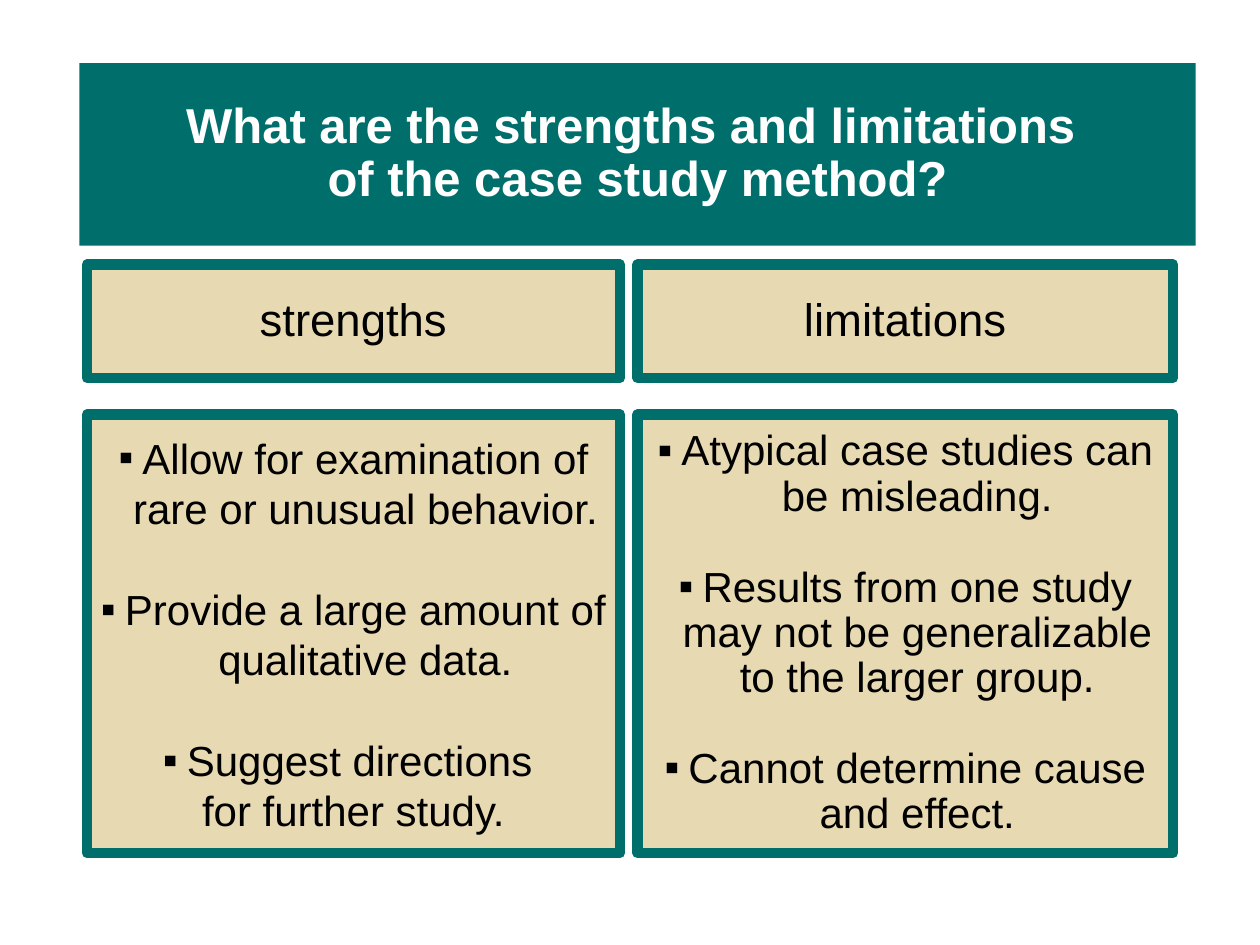
from lxml.etree import SubElement
from pptx import Presentation
from pptx.dml.color import RGBColor
from pptx.enum.text import MSO_ANCHOR, MSO_AUTO_SIZE, PP_ALIGN
from pptx.oxml.ns import qn
from pptx.util import Inches, Pt

COLORS = {"teal": "006F6C", "sand": "E7D9B1", "white": "FFFFFF", "black": "000000"}
BULLET_INDENT = Inches(0.19)


def add_text(frame, text, size, color="black", bold=False, spacing=1.0, before=0, bullet=False):
    paragraph = frame.paragraphs[0]
    if paragraph.text:
        paragraph = frame.add_paragraph()
    paragraph.text = text
    paragraph.alignment = PP_ALIGN.CENTER
    paragraph.line_spacing = spacing
    paragraph.space_before = Pt(before)
    paragraph.space_after = Pt(0)
    for run in paragraph.runs:
        run.font.name = "Arial"
        run.font.size = Pt(size)
        run.font.bold = bold
        run.font.color.rgb = RGBColor.from_string(COLORS[color])
    properties = paragraph._p.get_or_add_pPr()
    indent = BULLET_INDENT if bullet else 0
    properties.set("marL", str(indent))
    properties.set("indent", str(-indent))
    if bullet:
        SubElement(properties, qn("a:buChar"), char="▪")
    else:
        SubElement(properties, qn("a:buNone"))


def format_box(shape, left, top, width, height, fill, line=None):
    shape.left, shape.top = Inches(left), Inches(top)
    shape.width, shape.height = Inches(width), Inches(height)
    shape.fill.solid()
    shape.fill.fore_color.rgb = RGBColor.from_string(COLORS[fill])
    if line:
        shape.line.color.rgb = RGBColor.from_string(COLORS[line])
        shape.line.width = Pt(6)
    frame = shape.text_frame
    frame.word_wrap = True
    frame.auto_size = MSO_AUTO_SIZE.NONE
    frame.vertical_anchor = MSO_ANCHOR.MIDDLE
    return frame


presentation = Presentation()
presentation.slide_width, presentation.slide_height = Inches(10), Inches(7.5)
slide = presentation.slides.add_slide(presentation.slide_layouts.get_by_name("Comparison"))

title_frame = format_box(slide.shapes.title, 0.63, 0.5, 8.86, 1.45, "teal")
add_text(title_frame, "What are the strengths and limitations \vof the case study method?",
         28, color="white", bold=True, spacing=0.9)

columns = [
    {"heading": "strengths", "left": 0.69, "width": 4.23, "spacing": 1.0, "gap": 28.8,
     "points": ["Allow for examination of rare or unusual behavior.",
                "Provide a large amount of qualitative data.",
                "Suggest directions "],
     "closing": "for further study."},
    {"heading": "limitations", "left": 5.06, "width": 4.25, "spacing": 0.9, "gap": 26,
     "points": ["Atypical case studies can be misleading.",
                "Results from one study may not be generalizable to the larger group.",
                "Cannot determine cause and effect."],
     "closing": None},
]

for number, column in enumerate(columns):
    heading_shape = slide.placeholders[1 + 2 * number]
    list_shape = slide.placeholders[2 + 2 * number]
    left, width, spacing = column["left"], column["width"], column["spacing"]

    heading_frame = format_box(heading_shape, left, 2.1, width, 0.9, "sand", line="teal")
    add_text(heading_frame, column["heading"], 26, spacing=0.9, before=7.5)

    list_frame = format_box(list_shape, left, 3.29, width, 3.48, "sand", line="teal")
    for position, point in enumerate(column["points"]):
        add_text(list_frame, point, 24, spacing=spacing, bullet=True,
                 before=column["gap"] if position else 0)
    if column["closing"]:
        add_text(list_frame, column["closing"], 24, spacing=spacing)

presentation.save("out.pptx")
